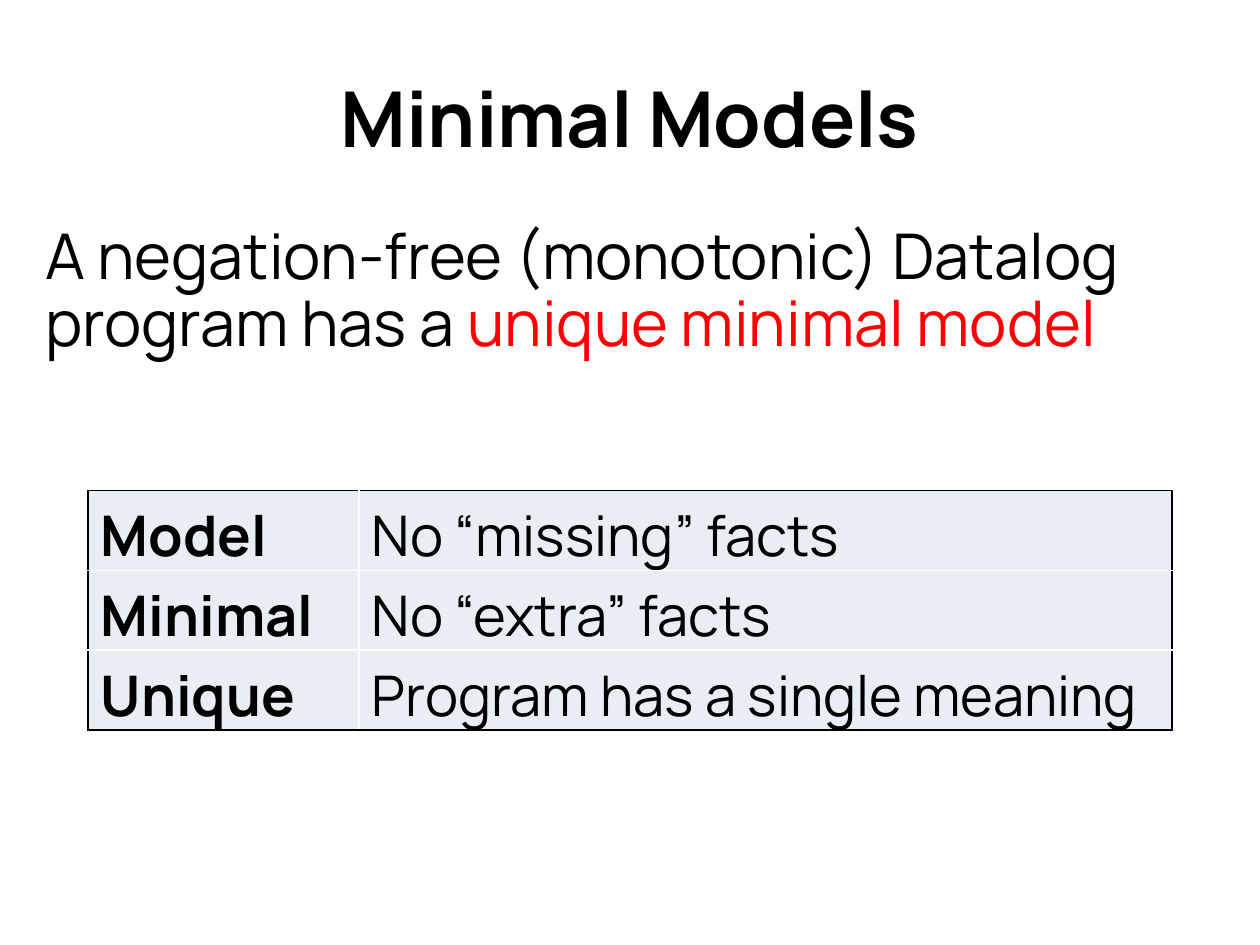
from lxml import etree
from pptx import Presentation
from pptx import util as u
from pptx.dml.color import RGBColor
from pptx.enum import text
from pptx.oxml.ns import qn

BLACK, WHITE, RED, PALE = "000000", "FFFFFF", "FF0000", "E9EDF4"
WIDTH, HEIGHT = u.Inches(10), u.Inches(7.5)


def rgb(value):
    return RGBColor.from_string(value)


class Page:
    """Holds the style and the slide; boxes are shares of the slide's size."""

    font = "Manrope"
    border = u.Pt(1)

    def __init__(self, slide):
        self.slide = slide

    def box(self, left, top, width, height):
        return [round(share * side) for share, side in
                zip((left, top, width, height), (WIDTH, HEIGHT) * 2)]

    def style(self, paragraph, size, bold=False):
        font = paragraph.font
        font.name, font.size, font.bold = self.font, u.Pt(size), bold
        font.color.rgb = rgb(BLACK)

    def words(self, box, runs, size, bold=False, anchor=text.MSO_ANCHOR.TOP):
        frame = self.slide.shapes.add_textbox(*self.box(*box)).text_frame
        frame.word_wrap = True
        frame.vertical_anchor = anchor
        paragraph = frame.paragraphs[0]
        self.style(paragraph, size, bold)
        for wording, color in runs:
            run = paragraph.add_run()
            run.text = wording
            run.font.color.rgb = rgb(color)
        return paragraph

    def edges(self, cell, colors):
        """Draw the left, right, top and bottom borders of a cell."""
        properties = cell._tc.get_or_add_tcPr()
        for place, (side, color) in enumerate(zip("LRTB", colors)):
            line = etree.Element(qn(f"a:ln{side}"), w=str(int(self.border)))
            fill = etree.SubElement(line, qn("a:solidFill"))
            etree.SubElement(fill, qn("a:srgbClr"), val=color)
            properties.insert(place, line)

    def table(self, box, rows, shares, size):
        left, top, width, height = self.box(*box)
        last_row, last_column = len(rows) - 1, len(shares) - 1
        table = self.slide.shapes.add_table(
            len(rows), len(shares), left, top, width, height).table
        for column, share in zip(table.columns, shares):
            column.width = round(width * share)
        for r, row in enumerate(rows):
            for c, wording in enumerate(row):
                cell = table.cell(r, c)
                cell.text = wording
                self.style(cell.text_frame.paragraphs[0], size, bold=c == 0)
                cell.fill.solid()
                cell.fill.fore_color.rgb = rgb(PALE)
                outer = (c == 0, c == last_column, r == 0, r == last_row)
                self.edges(cell, [BLACK if edge else WHITE for edge in outer])


def main():
    deck = Presentation()
    deck.slide_width, deck.slide_height = WIDTH, HEIGHT
    page = Page(deck.slides.add_slide(deck.slide_layouts[6]))

    # Title
    title = page.words((0.05, 0.04, 0.9, 1 / 6), [("Minimal Models", BLACK)],
                       44, bold=True, anchor=text.MSO_ANCHOR.MIDDLE)
    title.alignment = text.PP_ALIGN.CENTER

    # Statement
    statement = page.words(
        (0.026, 0.233, 0.936, 0.165),
        [("A negation-free (monotonic) Datalog program has a ", BLACK),
         ("unique minimal model", RED)], 36)
    statement.line_spacing = 0.88
    statement.space_before = u.Pt(3.5)

    # What each term means
    meanings = [("Model", "No “missing” facts"),
                ("Minimal", "No “extra” facts"),
                ("Unique", "Program has a single meaning")]
    page.table((0.07, 0.519, 0.86, 0.253), meanings, (0.25, 0.75), 32)

    deck.save("out.pptx")


if __name__ == "__main__":
    main()
